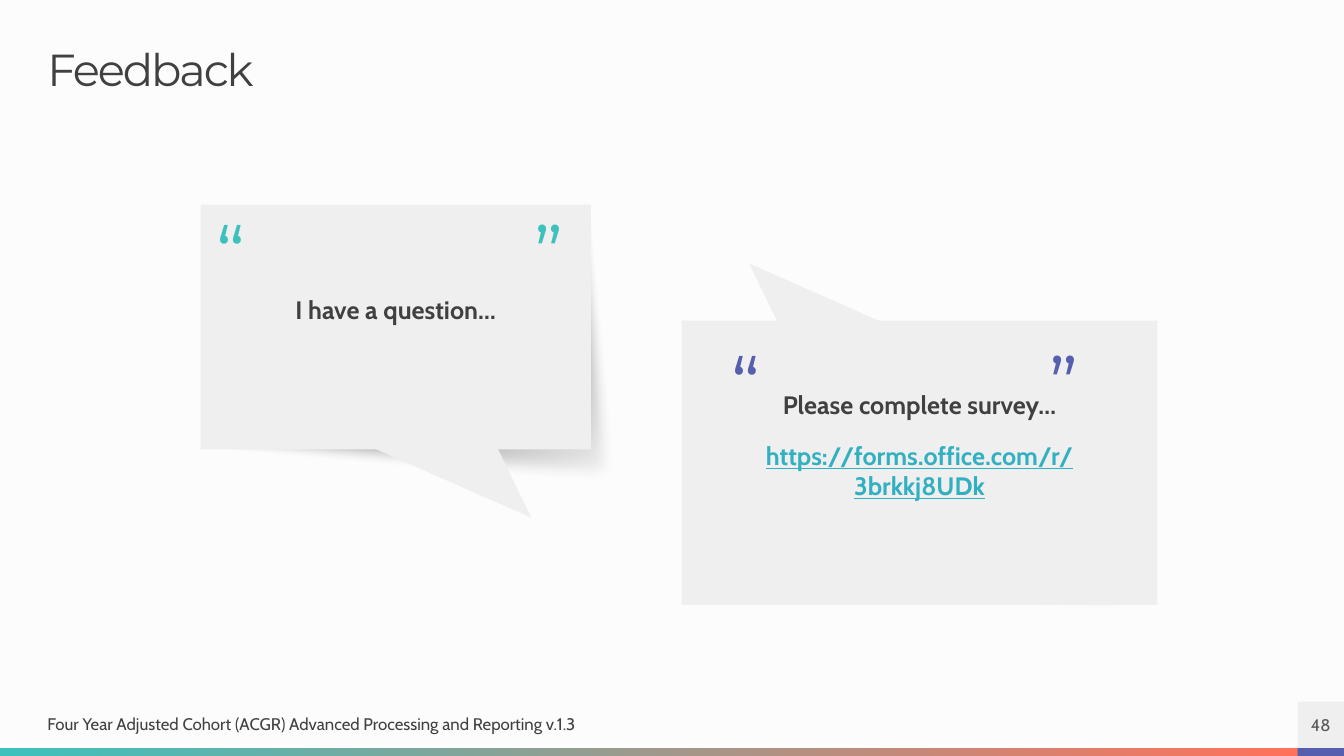
"""Build the Feedback slide with two speech bubbles."""
from lxml.etree import SubElement
from pptx import Presentation
from pptx.dml.color import RGBColor
from pptx.enum.shapes import MSO_SHAPE
from pptx.enum.text import MSO_ANCHOR, MSO_AUTO_SIZE, PP_ALIGN
from pptx.oxml.ns import qn
from pptx.util import Inches, Pt

COLORS = {"background": "FCFCFC", "panel": "EFEFEF", "text": "404040", "number": "595959",
          "teal": "3DC1BD", "coral": "FF715B", "indigo": "555FAD", "link": "31B0C1",
          "shadow": "000000"}
TITLE = "Feedback"
FOOTER = "Four Year Adjusted Cohort (ACGR) Advanced Processing and Reporting v.1.3"
PAGE_NUMBER = "48"
BUBBLES = [
    {"box": (1.99, 2.03, 3.87, 2.43), "shadow": (1.99, 2.03),
     "tail": (3.97, 3.62, 1.31, 1.79), "flip": "flipH", "tail_in_front": True,
     "quotes": (2.15, 2.14), "accent": "teal",
     "lines": [("I have a question…", "text")]},
    {"box": (6.76, 3.18, 4.72, 2.82), "shadow": (7.1, 3.31),
     "tail": (7.42, 2.34, 1.31, 1.79), "flip": "flipV", "tail_in_front": False,
     "quotes": (7.26, 3.44), "accent": "indigo",
     "lines": [("Please complete survey…", "text"),
               ("https://forms.office.com/r/3brkkj8UDk", "link")]},
]
SHADOW_OUTLINE = [(3.87, 0), (4.17, 2.82), (0, 2.43)]
QUOTE_GAP = 3.15
BAR_TOP, NUMBER_LEFT, NUMBER_SIZE = 7.42, 12.87, 0.46


def color(name):
    return RGBColor.from_string(COLORS[name])


def add_block(slide, kind, place, fill=None):
    shape = slide.shapes.add_shape(kind, *map(Inches, place))
    shape.shadow.inherit = False
    shape.line.fill.background()
    if fill:
        shape.fill.solid()
        shape.fill.fore_color.rgb = color(fill)
    return shape


def set_gradient(shape, first, last, angle):
    shape.fill.gradient()
    shape.fill.gradient_angle = angle
    stops = shape.fill.gradient_stops
    for stop, position, name in zip(stops, (0, 1), (first, last)):
        stop.position = position
        stop.color.rgb = color(name)


def set_frame(shape, anchor=MSO_ANCHOR.TOP, insets=(0, 0, 0, 0)):
    frame = shape.text_frame
    frame.word_wrap = True
    frame.auto_size = MSO_AUTO_SIZE.NONE
    frame.vertical_anchor = anchor
    (frame.margin_left, frame.margin_top,
     frame.margin_right, frame.margin_bottom) = map(Inches, insets)
    return frame


def add_text(paragraph, text, size, font, name, align=PP_ALIGN.LEFT):
    paragraph.alignment = align
    run = paragraph.add_run()
    run.text = text
    run.font.size = Pt(size)
    run.font.name = font
    run.font.color.rgb = color(name)
    return run


def add_display_text(shape, text, size, name):
    paragraph = set_frame(shape).paragraphs[0]
    paragraph.line_spacing = 0.9
    run = add_text(paragraph, text, size, "Montserrat", name)
    run.font._element.set("spc", "-150")


def add_shadow(slide, left, top):
    builder = slide.shapes.build_freeform(Inches(left), Inches(top))
    builder.add_line_segments([(Inches(left + x), Inches(top + y)) for x, y in SHADOW_OUTLINE])
    shape = builder.convert_to_shape()
    shape.shadow.inherit = False
    shape.line.fill.background()
    set_gradient(shape, "shadow", "shadow", 300)
    properties = shape._element.spPr
    last_color = properties.findall(".//" + qn("a:srgbClr"))[-1]
    SubElement(last_color, qn("a:alpha")).set("val", "0")
    effects = properties.find(qn("a:effectLst"))
    SubElement(effects, qn("a:softEdge")).set("rad", str(Pt(10)))


def add_tail(slide, bubble):
    tail = add_block(slide, MSO_SHAPE.ISOSCELES_TRIANGLE, bubble["tail"], "panel")
    tail.rotation = 133.9
    tail._element.spPr.find(qn("a:xfrm")).set(bubble["flip"], "1")


def add_bubble(slide, bubble):
    add_shadow(slide, *bubble["shadow"])
    if not bubble["tail_in_front"]:
        add_tail(slide, bubble)
    box = add_block(slide, MSO_SHAPE.RECTANGLE, bubble["box"], "panel")
    frame = set_frame(box, MSO_ANCHOR.MIDDLE, (0.2, 0.2, 0.2, 0.55))
    for index, (text, name) in enumerate(bubble["lines"]):
        paragraph = frame.add_paragraph() if index else frame.paragraphs[0]
        paragraph.space_before = Pt(15 if index else 0)
        run = add_text(paragraph, text, 18, "Cabin", name, PP_ALIGN.CENTER)
        run.font.bold = True
        run.font.underline = name == "link"
    if bubble["tail_in_front"]:
        add_tail(slide, bubble)
    left, top = bubble["quotes"]
    group = slide.shapes.add_group_shape()
    for index, mark in enumerate("“”"):
        place = (left + index * QUOTE_GAP, top, 0.53, 0.47)
        quote = group.shapes.add_textbox(*map(Inches, place))
        add_display_text(quote, mark, 54, bubble["accent"])


def main():
    presentation = Presentation()
    presentation.slide_width, presentation.slide_height = Inches(13.33), Inches(7.5)
    slide = presentation.slides.add_slide(presentation.slide_layouts[5])
    slide.background.fill.solid()
    slide.background.fill.fore_color.rgb = color("background")

    bar = add_block(slide, MSO_SHAPE.RECTANGLE, (0, BAR_TOP, NUMBER_LEFT, 0.08))
    set_gradient(bar, "teal", "coral", 0)
    add_block(slide, MSO_SHAPE.RECTANGLE, (NUMBER_LEFT, BAR_TOP, NUMBER_SIZE, 0.08), "indigo")

    title = slide.shapes.title
    title.left, title.top, title.width, title.height = map(Inches, (0.47, 0.47, 12.4, 0.47))
    add_display_text(title, TITLE, 32, "text")

    for bubble in BUBBLES:
        add_bubble(slide, bubble)

    footer = slide.shapes.add_textbox(*map(Inches, (0.47, 6.96, 5.98, 0.45)))
    frame = set_frame(footer, MSO_ANCHOR.MIDDLE)
    add_text(frame.paragraphs[0], FOOTER, 12, "Cabin", "text")
    number = add_block(slide, MSO_SHAPE.RECTANGLE,
                       (NUMBER_LEFT, BAR_TOP - NUMBER_SIZE, NUMBER_SIZE, NUMBER_SIZE), "panel")
    frame = set_frame(number, MSO_ANCHOR.MIDDLE)
    add_text(frame.paragraphs[0], PAGE_NUMBER, 12, "Cabin", "number", PP_ALIGN.CENTER)
    presentation.save("out.pptx")


if __name__ == "__main__":
    main()
